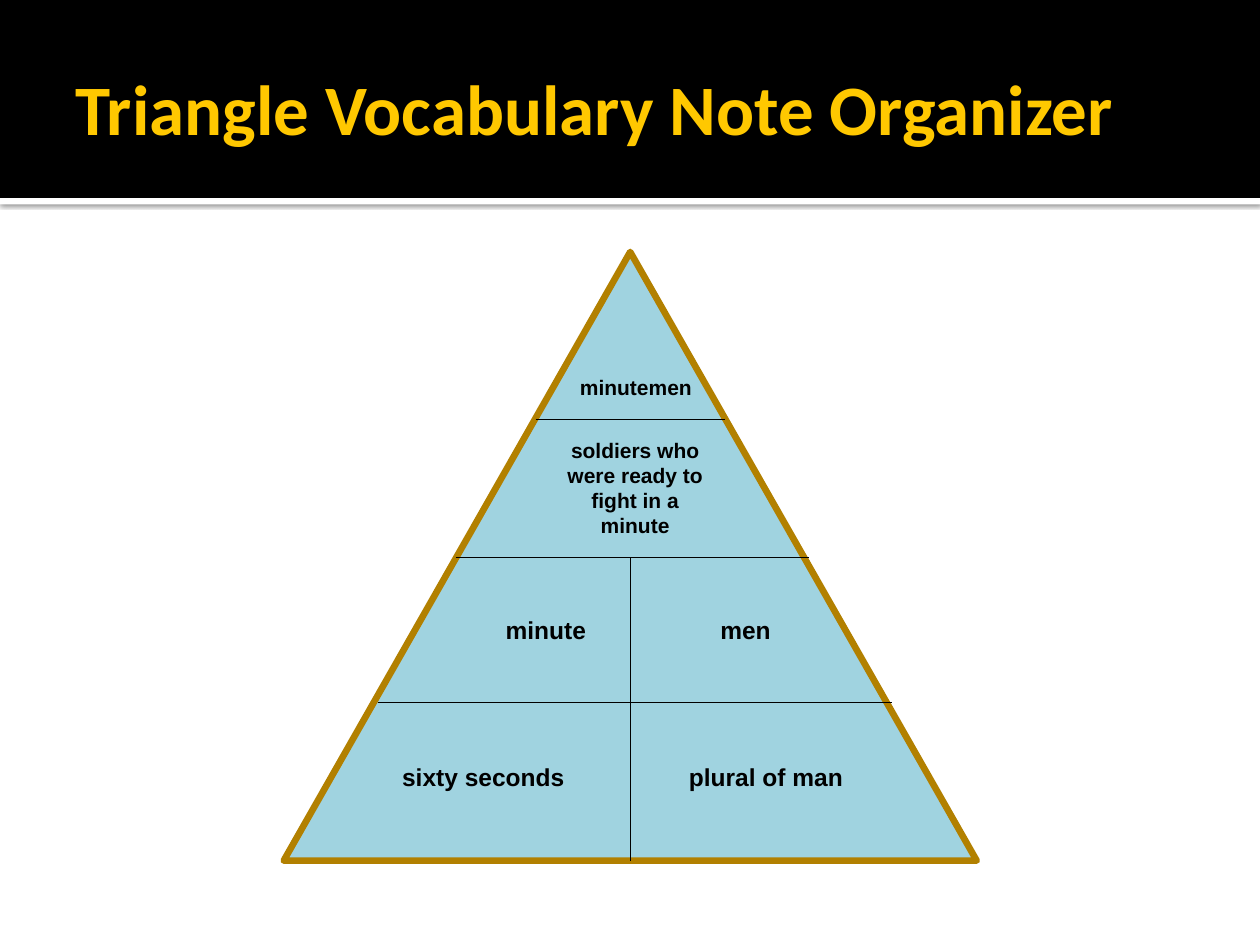
import pptx
import pptx.dml.color
import pptx.enum.shapes
import pptx.enum.text
import pptx.oxml
import pptx.oxml.ns
import pptx.util

Cm = pptx.util.Cm
Pt = pptx.util.Pt
KIND = pptx.enum.shapes.MSO_SHAPE
HUES = {"black": "000000", "white": "FFFFFF", "gold": "FFC800",
        "edge": "B28000", "blue": "A0D3E0"}


def tint(name):
    """Return the named colour."""
    return pptx.dml.color.RGBColor.from_string(HUES[name])


def node(text):
    """Parse an XML fragment in the drawing namespace."""
    return pptx.oxml.parse_xml(text.replace(">", f" {pptx.oxml.ns.nsdecls('a')}>", 1))


def solid(slide, kind, box, fill):
    """Add a filled shape without outline or shadow."""
    shape = slide.shapes.add_shape(kind, *map(Cm, box))
    shape.shadow.inherit = False
    shape.fill.solid()
    shape.fill.fore_color.rgb = tint(fill)
    shape.line.fill.background()
    return shape


def write(para, text, size, font, hue):
    """Add one bold run to a paragraph."""
    run = para.add_run()
    run.text = text
    run.font.size = Pt(size)
    run.font.name = font
    run.font.bold = True
    run.font.color.rgb = tint(hue)


def header(slide, box, text):
    """Place the black band, its shadowed rim and the title."""
    left, top, width, height = box
    rim = solid(slide, KIND.RECTANGLE, (left, top + height, width, 0.13), "white")
    glow = rim.element.spPr.find(pptx.oxml.ns.qn("a:effectLst"))
    glow.append(node(
        '<a:outerShdw blurRad="31750" dist="10160" dir="5400000" algn="tl" rotWithShape="0">'
        '<a:srgbClr val="000000"><a:alpha val="60000"/></a:srgbClr></a:outerShdw>'))
    solid(slide, KIND.RECTANGLE, box, "black")
    title = slide.shapes.title
    title.left, title.top = Cm(left + 1.27), Cm(top + 0.43)
    title.width, title.height = Cm(width - 2.54), Cm(3.48)
    frame = title.text_frame
    frame.margin_left, frame.margin_right = Cm(0.25), Cm(0.13)
    frame.vertical_anchor = pptx.enum.text.MSO_ANCHOR.MIDDLE
    frame.auto_size = pptx.enum.text.MSO_AUTO_SIZE.NONE
    para = frame.paragraphs[0]
    para.alignment = pptx.enum.text.PP_ALIGN.LEFT
    write(para, text, 40.5, "Calibri", "gold")
    title.element.getparent().append(title.element)


def rule(slide, start, end):
    """Draw a thin black line between two points."""
    line = slide.shapes.add_connector(
        pptx.enum.shapes.MSO_CONNECTOR.STRAIGHT, *map(Cm, start + end))
    line.line.width = Pt(0.5)
    line.line.color.rgb = tint("black")
    line.element.spPr.append(node("<a:effectLst></a:effectLst>"))


def label(slide, box, text, size):
    """Place a centred bold label."""
    frame = slide.shapes.add_textbox(*map(Cm, box)).text_frame
    frame.word_wrap = True
    frame.auto_size = pptx.enum.text.MSO_AUTO_SIZE.SHAPE_TO_FIT_TEXT
    para = frame.paragraphs[0]
    para.alignment = pptx.enum.text.PP_ALIGN.CENTER
    write(para, text, size, "Arial", "black")


def pyramid(slide, box, rows, cells):
    """Place the triangle with its dividing lines and labels."""
    left, top, width, height = box
    shape = solid(slide, KIND.ISOSCELES_TRIANGLE, box, "blue")
    shape.line.color.rgb = tint("edge")
    shape.line.width = Pt(3.78)
    shape.line.fill.fore_color.rgb = tint("edge")
    shape.element.spPr.find(pptx.oxml.ns.qn("a:ln")).append(node("<a:round></a:round>"))
    for y, start, end in rows:
        rule(slide, (left + start, top + y), (left + end, top + y))
    mid = left + width / 2
    rule(slide, (mid, top + rows[1][0]), (mid, top + height))
    for x, y, wide, high, text, size in cells:
        label(slide, (left + x, top + y, wide, high), text, size)


def main():
    """Build and save the slide."""
    deck = pptx.Presentation()
    deck.slide_width, deck.slide_height = Cm(25.4), Cm(19.05)
    slide = deck.slides.add_slide(deck.slide_layouts[5])
    header(slide, (0, 0, 25.4, 3.99), "Triangle Vocabulary Note Organizer")
    rows = [(3.38, 5.08, 8.89), (6.15, 3.48, 10.59), (9.09, 1.9, 12.27)]
    cells = [
        (5.51, 2.34, 3.18, 0.76, "minutemen", 12),
        (5.28, 3.61, 3.61, 2.31, "soldiers who were ready to fight in a minute", 12),
        (3.8, 7.19, 2.97, 0.86, "minute", 14),
        (7.62, 7.19, 3.38, 0.86, "men", 14),
        (1.7, 10.16, 4.65, 0.86, "sixty seconds", 14),
        (7.82, 10.16, 3.81, 0.86, "plural of man", 14),
    ]
    pyramid(slide, (5.72, 5.08, 13.97, 12.27), rows, cells)
    deck.save("out.pptx")


if __name__ == "__main__":
    main()
